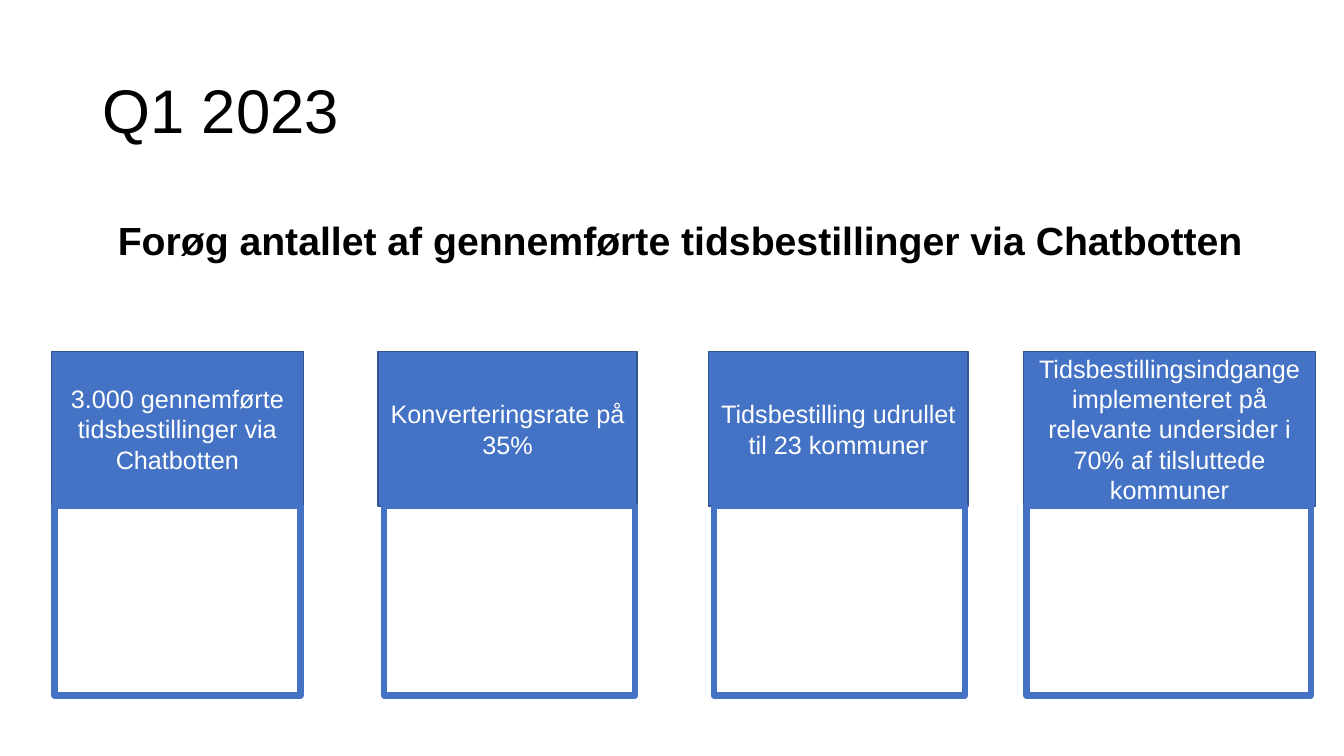
from pptx import Presentation
from pptx.dml.color import RGBColor
from pptx.enum import shapes, text
from pptx.util import Inches, Pt

TITLE = "Q1 2023"
OBJECTIVE = "Forøg antallet af gennemførte tidsbestillinger via Chatbotten"

# Key result, header (left, width), result box (left, width)
KEY_RESULTS = [
    ("3.000 gennemførte tidsbestillinger via Chatbotten", (0.51, 2.5), (0.54, 2.44)),
    ("Konverteringsrate på 35%", (3.75, 2.57), (3.81, 2.49)),
    ("Tidsbestilling udrullet til 23 kommuner", (7.03, 2.57), (7.08, 2.49)),
    ("Tidsbestillingsindgange implementeret på relevante undersider i 70% af "
     "tilsluttede kommuner", (10.15, 2.9), (10.18, 2.82)),
]
HEADER_TOP, HEADER_HEIGHT, RESULT_HEIGHT = 3.49, 1.53, 1.88


class Theme:
    font = "Arial"
    black = RGBColor(0x00, 0x00, 0x00)
    white = RGBColor(0xFF, 0xFF, 0xFF)
    blue = RGBColor(0x44, 0x72, 0xC4)
    dark_blue = RGBColor(0x32, 0x54, 0x91)
    title_size, objective_size, header_size = Pt(44), Pt(28), Pt(18)
    header_line, result_line = Pt(1), Pt(4.5)


def write(shape, wording, size, color, bold=False, anchor=text.MSO_ANCHOR.MIDDLE):
    """Put one paragraph in the shape and return it."""
    frame = shape.text_frame
    frame.word_wrap = True
    frame.vertical_anchor = anchor
    paragraph = frame.paragraphs[0]
    run = paragraph.add_run()
    run.text = wording
    run.font.name = Theme.font
    run.font.size = size
    run.font.bold = bold
    run.font.color.rgb = color
    return paragraph


def add_box(slide, left, top, width, height, line_color, line_width):
    box = slide.shapes.add_shape(
        shapes.MSO_SHAPE.RECTANGLE,
        Inches(left), Inches(top), Inches(width), Inches(height))
    box.shadow.inherit = False
    box.fill.background()
    box.line.color.rgb = line_color
    box.line.width = line_width
    return box


def add_key_result(slide, wording, header_span, result_span):
    left, width = header_span
    header = add_box(slide, left, HEADER_TOP, width, HEADER_HEIGHT,
                     Theme.dark_blue, Theme.header_line)
    header.fill.solid()
    header.fill.fore_color.rgb = Theme.blue
    paragraph = write(header, wording, Theme.header_size, Theme.white)
    paragraph.alignment = text.PP_ALIGN.CENTER

    left, width = result_span
    add_box(slide, left, HEADER_TOP + HEADER_HEIGHT, width, RESULT_HEIGHT,
            Theme.blue, Theme.result_line)


def main():
    presentation = Presentation()
    presentation.slide_width = Inches(13.33)
    presentation.slide_height = Inches(7.5)
    slide = presentation.slides.add_slide(presentation.slide_layouts[6])

    title = slide.shapes.add_textbox(Inches(0.92), Inches(0.4), Inches(11.5), Inches(1.45))
    write(title, TITLE, Theme.title_size, Theme.black).line_spacing = 0.9

    objective = slide.shapes.add_textbox(Inches(1.07), Inches(2.1), Inches(12.51), Inches(0.57))
    write(objective, OBJECTIVE, Theme.objective_size, Theme.black, bold=True,
          anchor=text.MSO_ANCHOR.TOP)

    for wording, header_span, result_span in KEY_RESULTS:
        add_key_result(slide, wording, header_span, result_span)

    presentation.save("out.pptx")


if __name__ == "__main__":
    main()
